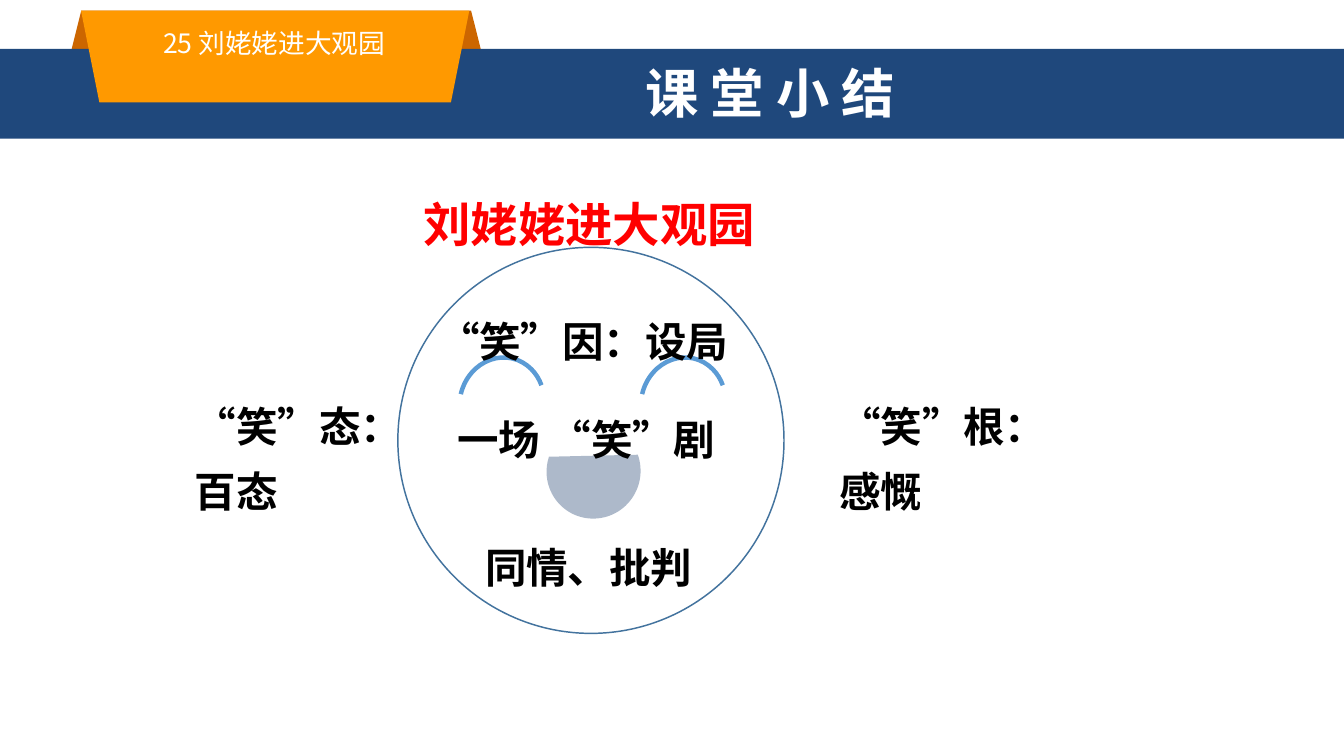
from dataclasses import dataclass
from typing import Optional

import pptx
import pptx.dml.color
import pptx.enum.lang
import pptx.enum.shapes
import pptx.enum.text
import pptx.oxml
import pptx.oxml.ns
import pptx.util

EMU_PER_PX = 9144  # 100 px to the inch
DEGREE = 0.6  # one degree of arc as an adjustment value
SHAPE = pptx.enum.shapes.MSO_SHAPE
ALIGN = pptx.enum.text.PP_ALIGN
ANCHOR = pptx.enum.text.MSO_ANCHOR


@dataclass(frozen=True)
class Theme:
    font: str = "Noto Sans CJK SC"
    bar: str = "1F487C"
    fold: str = "CC6600"
    ribbon: str = "FF9900"
    outline: str = "43739E"
    eye: str = "5B9BD5"
    mouth: str = "ADB9CA"
    white: str = "FFFFFF"
    red: str = "FF0000"
    black: str = "000000"
    title_size: int = 36
    heading_size: int = 32
    body_size: int = 28
    ribbon_size: int = 18


THEME = Theme()


@dataclass(frozen=True)
class Frame:
    left: int
    top: int
    width: int
    height: int


@dataclass(frozen=True)
class Figure:
    kind: SHAPE
    frame: Frame
    fill: Optional[str] = None
    line: Optional[str] = None
    line_width: float = 1
    rotation: float = 0
    adjustments: tuple[float, ...] = ()
    flipped: bool = False


@dataclass(frozen=True)
class Label:
    text: str
    frame: Frame
    size: int = THEME.body_size
    color: str = THEME.black


def px(length: int) -> pptx.util.Emu:
    return pptx.util.Emu(length * EMU_PER_PX)


def rgb(color: str) -> pptx.dml.color.RGBColor:
    return pptx.dml.color.RGBColor.from_string(color)


def draw_figure(shapes, figure: Figure) -> None:
    frame = figure.frame
    shape = shapes.add_shape(
        figure.kind, px(frame.left), px(frame.top), px(frame.width), px(frame.height)
    )
    shape.shadow.inherit = False
    shape.rotation = figure.rotation
    for index, value in enumerate(figure.adjustments):
        shape.adjustments[index] = value
    if figure.fill:
        shape.fill.solid()
        shape.fill.fore_color.rgb = rgb(figure.fill)
    else:
        shape.fill.background()
    if figure.line:
        shape.line.color.rgb = rgb(figure.line)
        shape.line.width = pptx.util.Pt(figure.line_width)
    else:
        shape.line.fill.background()
    if figure.flipped:
        shape.element.spPr.find(pptx.oxml.ns.qn("a:xfrm")).set("flipV", "1")


def write_text(box, text: str, *, size: int, color: str, spacing, bold: bool = True,
               align=ALIGN.LEFT, anchor=ANCHOR.TOP) -> None:
    text_frame = box.text_frame
    text_frame.word_wrap = True
    text_frame.auto_size = pptx.enum.text.MSO_AUTO_SIZE.NONE
    text_frame.vertical_anchor = anchor
    para = text_frame.paragraphs[0]
    para.alignment = align
    para.line_spacing = spacing
    para.space_before = pptx.util.Pt(0)
    span = para.add_run()
    span.text = text
    span.font.name = THEME.font
    span.font.size = pptx.util.Pt(size)
    span.font.bold = bold
    span.font.color.rgb = rgb(color)
    span.font.language_id = pptx.enum.lang.MSO_LANGUAGE_ID.SIMPLIFIED_CHINESE
    east_asian = pptx.oxml.parse_xml(
        f'<a:ea {pptx.oxml.ns.nsdecls("a")} typeface="{THEME.font}"/>'
    )
    span.font._element.find(pptx.oxml.ns.qn("a:latin")).addnext(east_asian)


def add_box(page, frame: Frame):
    return page.shapes.add_textbox(
        px(frame.left), px(frame.top), px(frame.width), px(frame.height)
    )


def line_pitch(size: int, lines: float) -> pptx.util.Pt:
    return pptx.util.Pt(round(size * 1.2 * lines, 1))


def draw_label(page, label: Label) -> None:
    write_text(add_box(page, label.frame), label.text, size=label.size,
               color=label.color, spacing=line_pitch(label.size, 1.3))


def draw_header(page) -> None:
    # Blue bar with the folded ribbon behind and in front of it
    draw_figure(page.shapes, Figure(SHAPE.TRAPEZOID, Frame(61, 10, 396, 61), THEME.fold))
    draw_figure(page.shapes, Figure(SHAPE.RECTANGLE, Frame(0, 46, 1260, 84), THEME.bar))

    # Title, raised above the bar
    title = page.shapes.title
    title.left, title.top, title.width, title.height = px(92), px(56), px(1260), px(66)
    page.shapes.element.append(title.element)
    write_text(title, "课 堂 小 结", size=THEME.title_size, color=THEME.white,
               spacing=0.9, align=ALIGN.CENTER, anchor=ANCHOR.BOTTOM)

    draw_figure(page.shapes, Figure(SHAPE.TRAPEZOID, Frame(76, 10, 364, 86), THEME.ribbon,
                                    adjustments=(0.2,), flipped=True))
    write_text(add_box(page, Frame(141, 20, 232, 40)), "25 刘姥姥进大观园",
               size=THEME.ribbon_size, color=THEME.white, bold=False,
               spacing=line_pitch(THEME.ribbon_size, 1), align=ALIGN.CENTER)


def draw_face(page) -> None:
    # Smiling face: outline, two eyes, mouth
    face = page.shapes.add_group_shape().shapes
    draw_figure(face, Figure(SHAPE.OVAL, Frame(373, 232, 362, 362), line=THEME.outline))
    for eye_left in (427, 597):
        draw_figure(face, Figure(SHAPE.ARC, Frame(eye_left, 339, 87, 79), line=THEME.eye,
                                 line_width=3, rotation=283,
                                 adjustments=(270 * DEGREE, 52.07 * DEGREE)))
    draw_figure(face, Figure(SHAPE.CHORD, Frame(512, 398, 89, 88), THEME.mouth,
                             rotation=294.5,
                             adjustments=(45 * DEGREE, 263.55 * DEGREE)))


HEADING = Label("刘姥姥进大观园", Frame(387, 162, 354, 70), THEME.heading_size, THEME.red)
NOTES = (
    Label("“笑”因：设局", Frame(401, 277, 307, 71)),
    Label("一场 “笑”剧", Frame(419, 369, 307, 71)),
    Label("同情、批判", Frame(445, 489, 222, 71)),
    Label("“笑”态：百态", Frame(173, 357, 234, 133)),
    Label("“笑”根：感慨", Frame(777, 357, 234, 133)),
)


def main() -> None:
    deck = pptx.Presentation()
    deck.slide_width, deck.slide_height = px(1260), px(709)
    page = deck.slides.add_slide(deck.slide_layouts[5])  # title only

    draw_header(page)
    draw_label(page, HEADING)
    draw_face(page)
    for note in NOTES:
        draw_label(page, note)
    deck.save("out.pptx")


if __name__ == "__main__":
    main()
